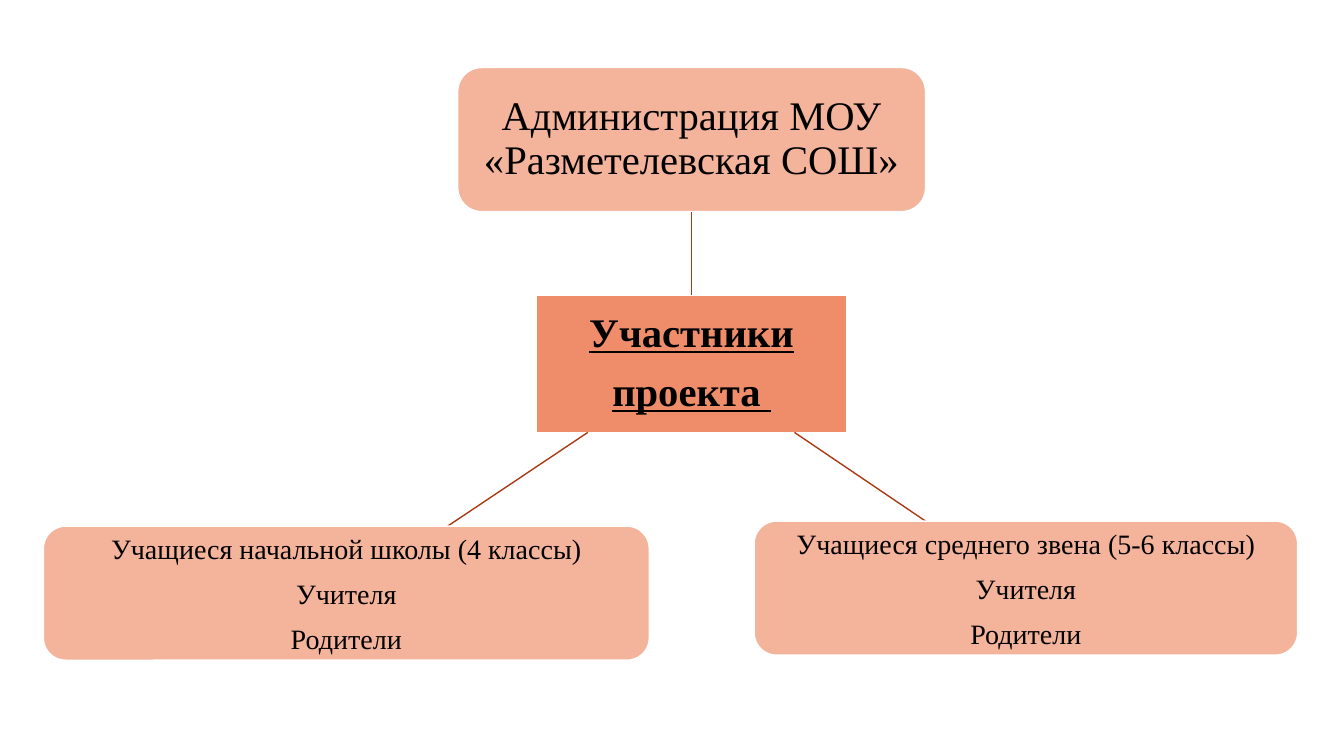
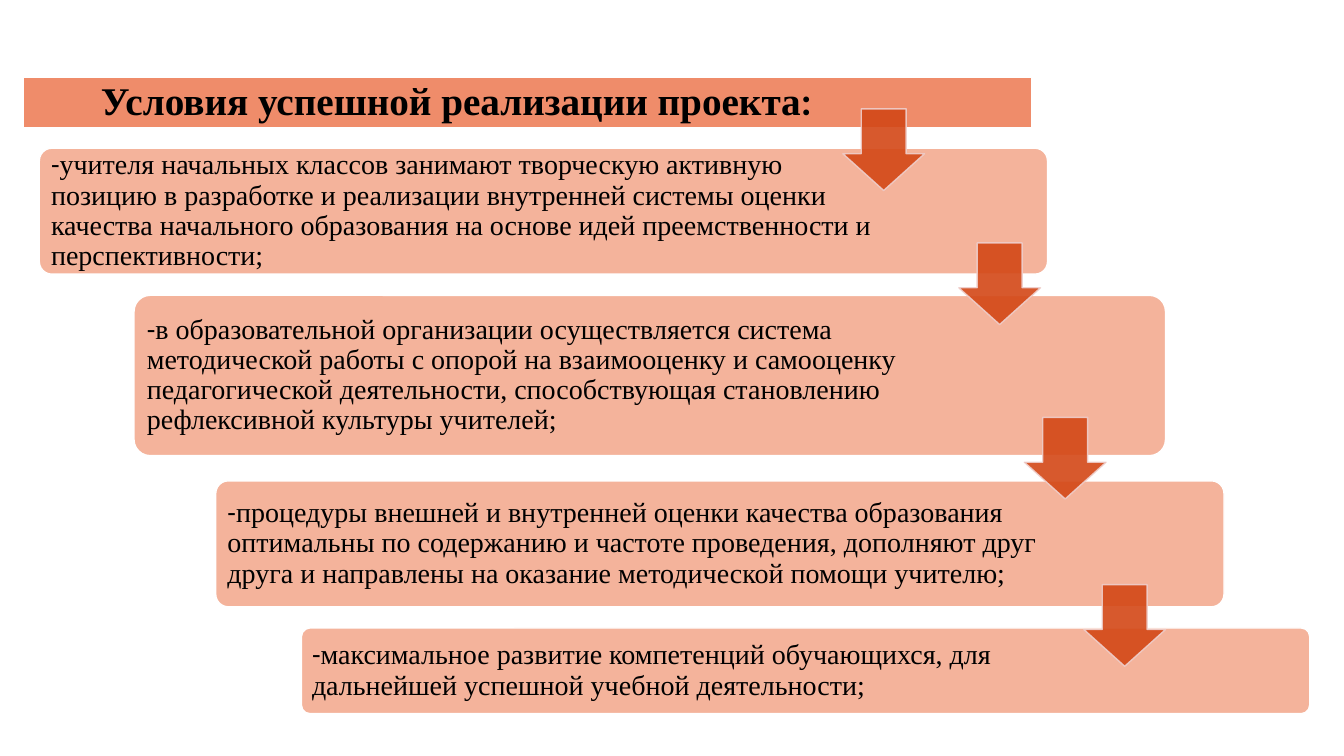
"""Build two slides: the project participants and the conditions for success."""
import pptx
import pptx.dml.color
import pptx.enum.shapes
import pptx.enum.text
import pptx.oxml
import pptx.oxml.ns
import pptx.util
from pptx.util import Inches, Pt

SERIF, SANS = "Times New Roman", "Calibri"
ACCENT, PALE, ARROW = "EF8C6A", "F4B39B", "D34817"
ARROW_EDGE, LINK, WHITE, BLACK = "EFCFCC", "A93A12", "FFFFFF", "000000"
SHAPES = pptx.enum.shapes.MSO_SHAPE
ALIGN = pptx.enum.text.PP_ALIGN
TITLE_ONLY = 5

PARTICIPANTS_TITLE = ["Участники", "проекта "]
PARTICIPANTS_BOX = (5.32, 2.93, 3.08, 1.36)
ADMINISTRATION = ["Администрация МОУ «Разметелевская СОШ»"]
ADMINISTRATION_BOX = (4.54, 0.67, 4.64, 1.43)
GROUPS = [
    {"lines": ["Учащиеся среднего звена (5-6 классы)", "Учителя", "Родители"],
     "box": (7.48, 5.17, 5.39, 1.33), "link": (7.88, 4.29, 9.18, 5.17)},
    {"lines": ["Учащиеся начальной школы (4 классы)", "Учителя", "Родители"],
     "box": (0.43, 5.22, 6.01, 1.33), "link": (5.83, 4.29, 4.44, 5.22)},
]

CONDITIONS_TITLE = [[("Условия успешной реализации проекта", SERIF), (":", SANS)]]
CONDITIONS_BOX = (0.23, 0.77, 10, 0.5)
CONDITIONS = [
    ("учителя начальных классов занимают творческую активную позицию в разработке "
     "и реализации внутренней системы оценки качества начального образования "
     "на основе идей преемственности и перспективности;", (0.39, 1.47, 10, 1.25)),
    ("в образовательной организации осуществляется система методической работы "
     "с опорой на взаимооценку и самооценку педагогической деятельности, "
     "способствующая становлению рефлексивной культуры учителей;",
     (1.33, 2.93, 10.23, 1.59)),
    ("процедуры внешней и внутренней оценки качества образования оптимальны "
     "по содержанию и частоте проведения, дополняют друг друга и направлены "
     "на оказание методической помощи учителю;", (2.14, 4.77, 10, 1.25)),
    ("максимальное развитие компетенций обучающихся, для дальнейшей успешной "
     "учебной деятельности;", (2.99, 6.23, 10, 0.85)),
]
ARROW_SIZE = 0.81
ARROW_CORNERS = [(8.36, 1.08), (9.51, 2.41), (10.16, 4.14), (10.75, 5.8)]


def color(value):
    return pptx.dml.color.RGBColor.from_string(value)


def paint(shape, fill, edge, opacity=100):
    shape.shadow.inherit = False
    shape.fill.solid()
    shape.fill.fore_color.rgb = color(fill)
    shape.line.color.rgb = color(edge)
    shape.line.width = Pt(1)
    if opacity < 100:
        for node in shape.element.spPr.iter(pptx.oxml.ns.qn("a:srgbClr")):
            alpha = node.makeelement(pptx.oxml.ns.qn("a:alpha"), {"val": str(opacity * 1000)})
            node.append(alpha)


def write(shape, lines, size, align=ALIGN.CENTER, spacing=0.9, after=0,
          inset=0.08, right=None, bold=False, underline=False):
    frame = shape.text_frame
    frame.word_wrap = True
    frame.auto_size = pptx.enum.text.MSO_AUTO_SIZE.NONE
    frame.vertical_anchor = pptx.enum.text.MSO_ANCHOR.MIDDLE
    frame.margin_left = frame.margin_top = frame.margin_bottom = Inches(inset)
    frame.margin_right = Inches(inset if right is None else right)
    for index, line in enumerate(lines):
        paragraph = frame.add_paragraph() if index else frame.paragraphs[0]
        paragraph.alignment = align
        paragraph.line_spacing = spacing
        paragraph.space_before = Pt(0)
        paragraph.space_after = Pt(after)
        for text, font_name in [(line, SERIF)] if isinstance(line, str) else line:
            run = paragraph.add_run()
            run.text = text
            run.font.name = font_name
            run.font.size = Pt(size)
            run.font.bold = bold
            run.font.underline = underline
            run.font.color.rgb = color(BLACK)


def rounded_box(slide, box, fill=PALE, corner=None):
    shape = slide.shapes.add_shape(SHAPES.ROUNDED_RECTANGLE, *map(Inches, box))
    if corner:
        shape.adjustments[0] = corner
    paint(shape, fill, WHITE)
    return shape


def rounded_title(slide, box, corner=None):
    title = slide.shapes.title
    title.left, title.top, title.width, title.height = map(Inches, box)
    title.element.spPr.append(pptx.oxml.parse_xml(
        f'<a:prstGeom {pptx.oxml.ns.nsdecls("a")} prst="roundRect"><a:avLst/></a:prstGeom>'))
    if corner:
        title.adjustments[0] = corner
    paint(title, ACCENT, WHITE)
    return title


def link(slide, ends):
    connector = slide.shapes.add_connector(
        pptx.enum.shapes.MSO_CONNECTOR.STRAIGHT, *map(Inches, ends))
    connector.line.color.rgb = color(LINK)
    connector.line.width = Pt(1)
    properties = connector.element.spPr
    properties.append(properties.makeelement(pptx.oxml.ns.qn("a:effectLst"), {}))
    return connector


def build_participants(slide):
    title = rounded_title(slide, PARTICIPANTS_BOX)
    write(title, PARTICIPANTS_TITLE, 29, after=11, bold=True, underline=True)
    administration = rounded_box(slide, ADMINISTRATION_BOX)
    write(administration, ADMINISTRATION, 29)
    upward = link(slide, (6.86, 2.93, 6.86, 2.1))
    upward.begin_connect(title, 0)
    upward.end_connect(administration, 2)
    for group in GROUPS:
        link(slide, group["link"])
        shape = rounded_box(slide, group["box"])
        write(shape, group["lines"], 20, spacing=1, after=8, inset=0.06)


def build_conditions(slide):
    title = rounded_title(slide, CONDITIONS_BOX, corner=0.1)
    write(title, CONDITIONS_TITLE, 28, inset=0.12, right=1.53, bold=True)
    for text, box in CONDITIONS:
        shape = rounded_box(slide, box, corner=0.1)
        write(shape, [[("-", SANS), (text, SERIF)]], 20, align=ALIGN.LEFT, right=1.64)
    for left, top in ARROW_CORNERS:
        arrow = slide.shapes.add_shape(
            SHAPES.DOWN_ARROW, *map(Inches, (left, top, ARROW_SIZE, ARROW_SIZE)))
        arrow.adjustments[0] = 0.55
        arrow.adjustments[1] = 0.45
        paint(arrow, ARROW, ARROW_EDGE, opacity=90)


def main():
    presentation = pptx.Presentation()
    presentation.slide_width, presentation.slide_height = Inches(13.33), Inches(7.5)
    for build in (build_participants, build_conditions):
        build(presentation.slides.add_slide(presentation.slide_layouts[TITLE_ONLY]))
    presentation.save("out.pptx")


if __name__ == "__main__":
    main()
